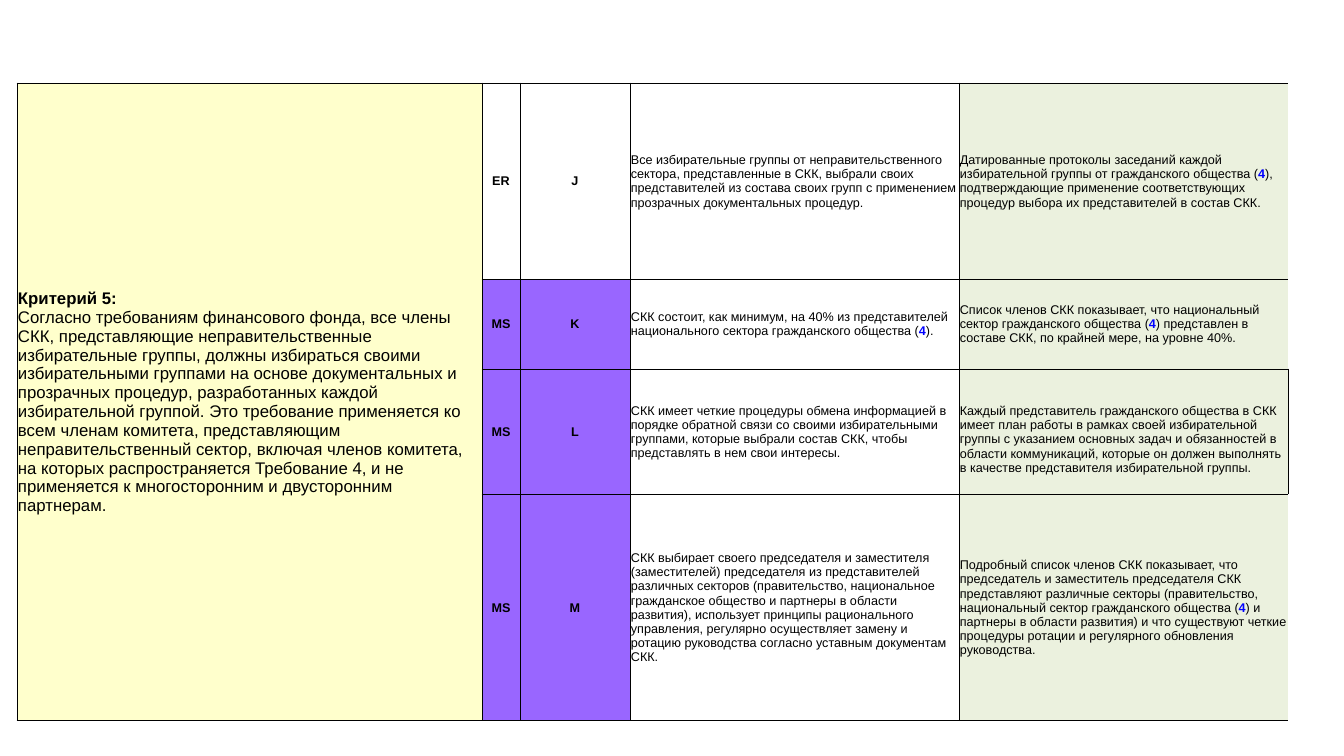
import lxml.etree
import pptx
import pptx.dml.color
import pptx.enum.text
import pptx.oxml.ns
import pptx.util

# Content: a cell is a list of (text, style) segments
CRITERION = [
    ("Критерий 5: \n", "bold"),
    ("Согласно требованиям финансового фонда, все члены СКК, представляющие "
     "неправительственные избирательные группы, должны избираться своими избирательными "
     "группами на основе документальных и прозрачных процедур, разработанных каждой "
     "избирательной группой. Это требование применяется ко всем членам комитета, "
     "представляющим неправительственный сектор, включая членов комитета, на которых "
     "распространяется Требование 4, и не применяется к многосторонним и двусторонним "
     "партнерам.", "plain"),
]
REFERENCE = ("4", "reference")
REQUIREMENTS = [
    ("ER", "J",
     [("Все избирательные группы от неправительственного сектора, представленные в СКК, "
       "выбрали своих представителей из состава своих групп с применением прозрачных "
       "документальных процедур.", "plain")],
     [("Датированные протоколы заседаний каждой избирательной группы от гражданского "
       "общества (", "plain"), REFERENCE,
      ("), подтверждающие применение соответствующих процедур выбора их представителей "
       "в состав СКК.", "plain")]),
    ("MS", "K",
     [("СКК состоит, как минимум, на 40% из представителей национального сектора "
       "гражданского общества (", "plain"), REFERENCE, (").", "plain")],
     [("Список членов СКК показывает, что национальный сектор гражданского общества (",
       "plain"), REFERENCE,
      (") представлен в составе СКК, по крайней мере, на уровне 40%.", "plain")]),
    ("MS", "L",
     [("СКК имеет четкие процедуры обмена информацией в порядке обратной связи со своими "
       "избирательными группами, которые выбрали состав СКК, чтобы представлять в нем свои "
       "интересы.", "plain")],
     [("\nКаждый представитель гражданского общества в СКК имеет план работы в рамках своей "
       "избирательной группы с указанием основных задач и обязанностей в области "
       "коммуникаций, которые он должен выполнять в качестве представителя избирательной "
       "группы.", "plain")]),
    ("MS", "M",
     [("СКК выбирает своего председателя и заместителя (заместителей) председателя из "
       "представителей различных секторов (правительство, национальное гражданское общество "
       "и партнеры в области развития), использует принципы рационального управления, "
       "регулярно осуществляет замену и ротацию руководства согласно уставным документам "
       "СКК.", "plain")],
     [("Подробный список членов СКК показывает, что председатель и заместитель председателя "
       "СКК представляют различные секторы (правительство, национальный сектор гражданского "
       "общества (", "plain"), REFERENCE,
      (") и партнеры в области развития) и что существуют четкие процедуры ротации и "
       "регулярного обновления руководства.", "plain")]),
]
CLOSED_ROW = "L"  # the only row with a border on its right edge

THEME = {
    "font": "Arial", "criterion_size": 12, "cell_size": 9, "border_width": 0.5,
    "text": "000000", "reference": "0000FF", "border": "000000",
    "criterion_fill": "FFFFCC", "standard_fill": "9966FF", "evidence_fill": "EBF1DE",
}

# Lengths in px
SLIDE_SIZE = (1344, 756)
TABLE_LEFT, TABLE_TOP = 17, 83
COLUMN_WIDTHS = [465, 38, 110, 329, 329]
ROW_HEIGHTS = [196, 90, 125, 179]
CELL_INSET = 1
NO_STYLE = "{2D5ABB26-0587-4C30-8999-92F81FD0307C}"


def px(length):
    return pptx.util.Emu(round(length * 914400 / 100.8))


def color(name):
    return pptx.dml.color.RGBColor.from_string(THEME[name])


def add_element(parent, tag, **attributes):
    return lxml.etree.SubElement(parent, pptx.oxml.ns.qn(tag), **attributes)


def draw_borders(cell, open_right):
    properties = cell._tc.get_or_add_tcPr()
    width = str(pptx.util.Pt(THEME["border_width"]))
    for side in "LRTB":
        line = add_element(properties, "a:ln" + side, w=width)
        if side == "R" and open_right:
            add_element(line, "a:noFill")
        else:
            fill = add_element(line, "a:solidFill")
            add_element(fill, "a:srgbClr", val=THEME["border"])


def write_segments(paragraph, segments, size):
    for text, style in segments:
        for index, line in enumerate(text.split("\n")):
            if index:
                paragraph.add_line_break()
                add_element(paragraph._p[-1], "a:rPr", sz=str(size * 100))
            if line:
                run = paragraph.add_run()
                run.text = line
                run.font.name = THEME["font"]
                run.font.size = pptx.util.Pt(size)
                run.font.bold = style != "plain"
                run.font.color.rgb = color("reference" if style == "reference" else "text")


def fill_cell(cell, segments, fill=None, centered=False, size=THEME["cell_size"]):
    cell.margin_left = cell.margin_right = cell.margin_top = px(CELL_INSET)
    cell.margin_bottom = 0
    cell.vertical_anchor = pptx.enum.text.MSO_ANCHOR.MIDDLE
    if fill:
        cell.fill.solid()
        cell.fill.fore_color.rgb = color(fill)
    else:
        cell.fill.background()
    paragraph = cell.text_frame.paragraphs[0]
    if centered:
        paragraph.alignment = pptx.enum.text.PP_ALIGN.CENTER
    write_segments(paragraph, segments, size)


def add_requirements_table(slide):
    frame = slide.shapes.add_table(
        len(ROW_HEIGHTS), len(COLUMN_WIDTHS), px(TABLE_LEFT), px(TABLE_TOP),
        px(sum(COLUMN_WIDTHS)), px(sum(ROW_HEIGHTS)))
    table = frame.table
    table.first_row = table.horz_banding = False
    table._tbl.tblPr.find(pptx.oxml.ns.qn("a:tableStyleId")).text = NO_STYLE
    for column, width in zip(table.columns, COLUMN_WIDTHS):
        column.width = px(width)
    for row, height in zip(table.rows, ROW_HEIGHTS):
        row.height = px(height)

    # Borders
    last_column = len(COLUMN_WIDTHS) - 1
    for row, requirement in zip(table.rows, REQUIREMENTS):
        for index, cell in enumerate(row.cells):
            draw_borders(cell, index == last_column and requirement[1] != CLOSED_ROW)

    # Criterion spanning all rows
    criterion = table.cell(0, 0)
    criterion.merge(table.cell(len(ROW_HEIGHTS) - 1, 0))
    fill_cell(criterion, CRITERION, "criterion_fill", size=THEME["criterion_size"])

    # Requirements and their evidence
    for index, (kind, letter, requirement, evidence) in enumerate(REQUIREMENTS):
        kind_fill = "standard_fill" if kind == "MS" else None
        fill_cell(table.cell(index, 1), [(kind, "bold")], kind_fill, centered=True)
        fill_cell(table.cell(index, 2), [(letter, "bold")], kind_fill, centered=True)
        fill_cell(table.cell(index, 3), requirement)
        fill_cell(table.cell(index, 4), evidence, "evidence_fill")


def main():
    presentation = pptx.Presentation()
    presentation.slide_width, presentation.slide_height = map(px, SLIDE_SIZE)
    slide = presentation.slides.add_slide(presentation.slide_layouts[6])
    add_requirements_table(slide)
    presentation.save("out.pptx")


if __name__ == "__main__":
    main()
